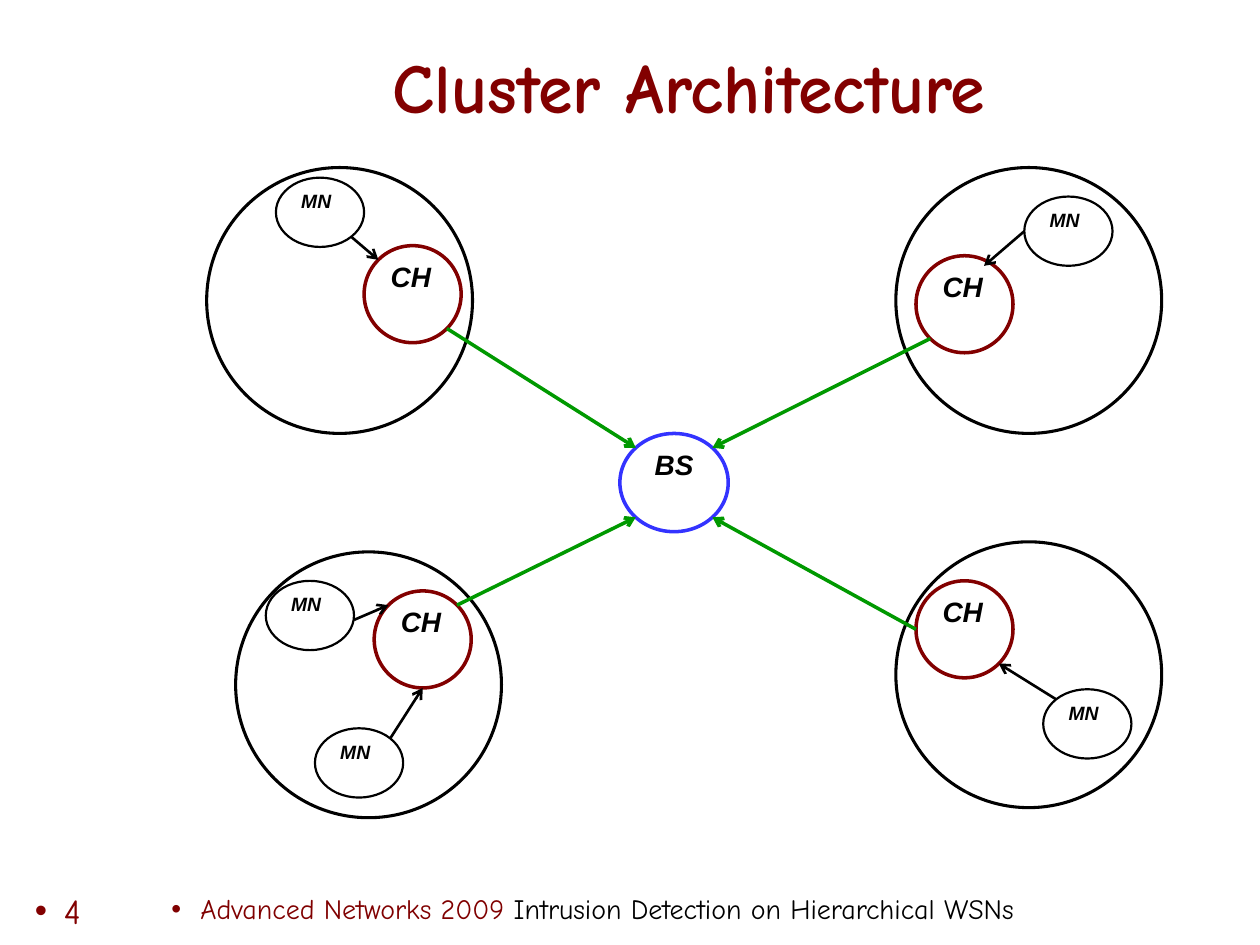
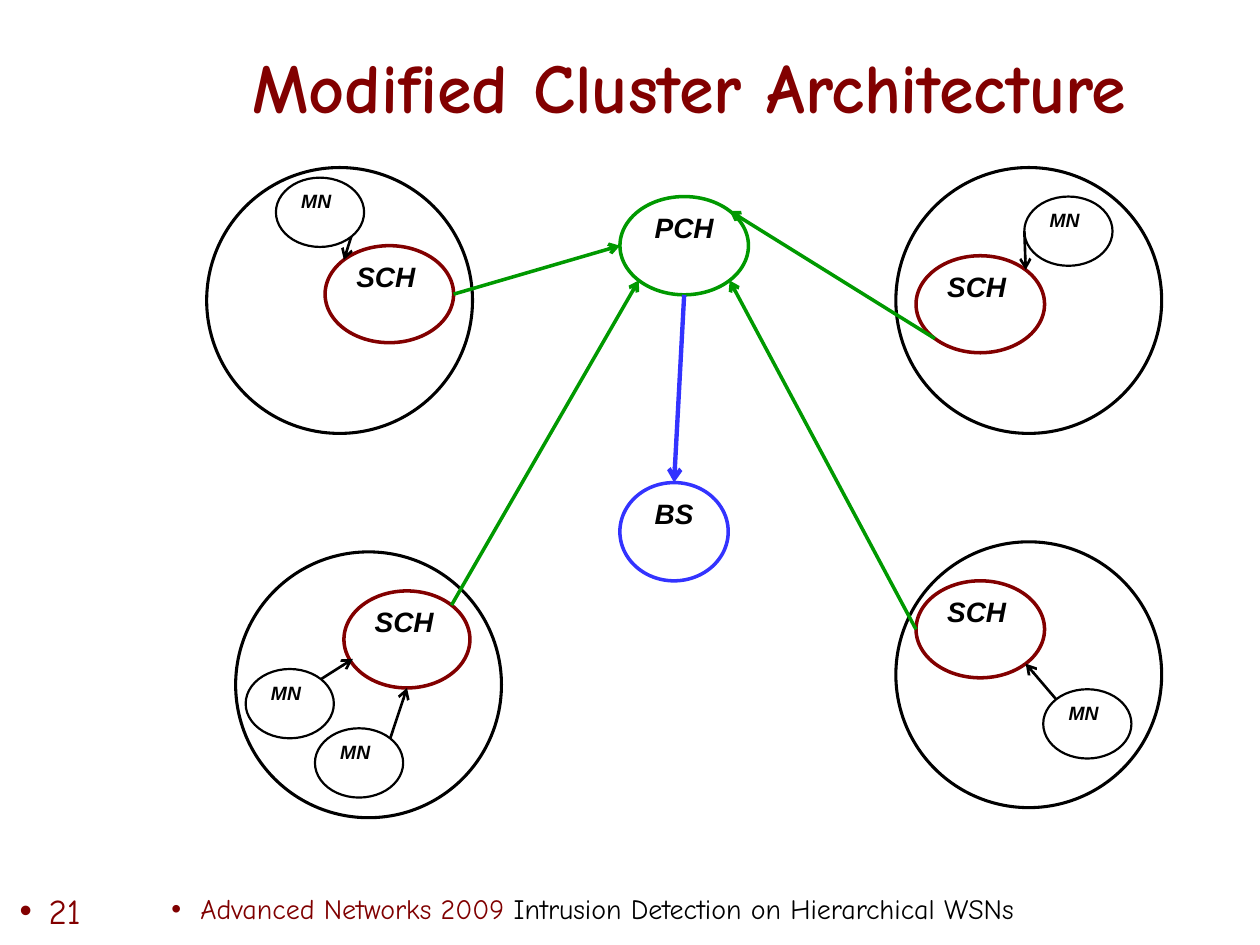
"""Build two slides on cluster architecture in sensor networks."""
import math
from pptx import Presentation, util as u
from pptx.dml.color import RGBColor
from pptx.enum import shapes, text
from pptx.oxml.ns import qn

THEME = {
    "maroon": "820000", "brown": "800000", "black": "000000",
    "green": "009900", "blue": "3333FF",
    "head": "Comic Neue", "body": "Arial",
    "title": 40, "page": 20, "foot": 16, "node": 16, "small": 11,
}
LEFT, MID, RIGHT = (text.PP_ALIGN.LEFT, text.PP_ALIGN.CENTER, text.PP_ALIGN.RIGHT)
FOOT = [("Advanced Networks 2009 ", "brown"),
        ("Intrusion Detection on Hierarchical WSNs", "black")]
TITLE_BOX = (1.06, 0.13, 8.82, 1.1)
FOOT_BOX = (0.86, 7.03, 7.84, 0.39)
PAGE_BOX = (-0.2, 7.01, 0.94, 0.52)
HANG = 0.23
RING = 2.11
RINGS = [(1.64, 1.33), (1.87, 4.38), (7.11, 1.33), (7.11, 4.3)]

KINDS = {
    "MN": dict(size=(0.7, 0.55), color="black", line=1.25, font="small", align=LEFT),
    "CH": dict(size=(0.77, 0.77), color="maroon", line=2, font="node", align=LEFT),
    "SCH": dict(size=(1.02, 0.77), color="maroon", line=2, font="node", align=LEFT),
    "PCH": dict(size=(1.02, 0.78), color="green", line=2, font="node", align=MID),
    "BS": dict(size=(0.86, 0.78), color="blue", line=2, font="node", align=MID),
}
LINKS = {"member": ("black", 1.5), "head": ("green", 2), "base": ("blue", 2.5)}
SITES = {"E": 0, "SE": 45, "S": 90, "SW": 135, "W": 180, "NW": 225, "N": 270, "NE": 315}

MEMBERS = {"m1": ("MN", 2.19, 1.41), "m3": ("MN", 8.13, 1.56),
           "m4": ("MN", 8.28, 5.47), "m5": ("MN", 2.5, 5.78)}
SLIDES = [
    dict(
        title="Cluster Architecture", page="4",
        nodes=MEMBERS | {
            "m2": ("MN", 2.11, 4.61), "base": ("BS", 4.92, 3.44),
            "h1": ("CH", 2.89, 1.95), "h2": ("CH", 2.97, 4.69),
            "h3": ("CH", 7.27, 2.03), "h4": ("CH", 7.27, 4.61)},
        links=[
            ("head", ("h1", "SE"), ("base", "NW")),
            ("head", ("h2", "NE"), ("base", "SW")),
            ("head", ("h3", "SW"), ("base", "NE")),
            ("head", ("h4", "W"), ("base", "SE")),
            ("member", ("m1", "SE"), ("h1", "NW")),
            ("member", (2.81, 4.92), ("h2", "NW")),
            ("member", ("m5", "NE"), ("h2", "S")),
            ("member", ("m3", "W"), (7.81, 2.11)),
            ("member", ("m4", "NW"), ("h4", "SE"))]),
    dict(
        title="Modified Cluster Architecture", page="21",
        nodes=MEMBERS | {
            "m2": ("MN", 1.95, 5.31), "base": ("BS", 4.92, 3.83),
            "main": ("PCH", 4.92, 1.56),
            "h1": ("SCH", 2.58, 1.95), "h2": ("SCH", 2.73, 4.69, 1),
            "h3": ("SCH", 7.27, 2.03), "h4": ("SCH", 7.27, 4.61)},
        links=[
            ("head", ("h1", "E"), ("main", "W")),
            ("head", ("h2", "NE"), ("main", "SW")),
            ("head", ("h3", "SW"), ("main", "NE")),
            ("head", ("h4", "W"), ("main", "SE")),
            ("base", ("main", "S"), ("base", "N")),
            ("member", ("m1", "SE"), ("h1", "NW")),
            ("member", ("m2", "NE"), (2.8, 5.23)),
            ("member", ("m5", "NE"), ("h2", "S")),
            ("member", ("m3", "W"), ("h3", "NE")),
            ("member", ("m4", "NW"), ("h4", "SE"))]),
]


def rgb(name):
    """Return a theme colour."""
    return RGBColor.from_string(THEME[name])


def put(obj, **vals):
    """Set each given attribute."""
    for key, val in vals.items():
        setattr(obj, key, val)


def inch(box):
    """Turn numbers into lengths."""
    return [u.Inches(n) for n in box]


def write(para, runs, size, face, **look):
    """Fill a paragraph with coloured runs."""
    for words, color in runs:
        run = para.add_run()
        run.text = words
        put(run.font, size=u.Pt(THEME[size]), name=THEME[face], **look)
        run.font.color.rgb = rgb(color)


def oval(slide, box, color, width):
    """Draw an unfilled ellipse."""
    shape = slide.shapes.add_shape(shapes.MSO_SHAPE.OVAL, *inch(box))
    shape.shadow.inherit = False
    shape.fill.background()
    shape.line.color.rgb = rgb(color)
    shape.line.width = u.Pt(width)
    return shape


def node(slide, kind, x, y, wide=None):
    """Draw a labelled node and return its box."""
    form = KINDS[kind]
    wide, high = wide or form["size"][0], form["size"][1]
    box = (x, y, wide, high)
    frame = oval(slide, box, form["color"], form["line"]).text_frame
    put(frame, word_wrap=True, vertical_anchor=text.MSO_ANCHOR.TOP)
    para = frame.paragraphs[0]
    put(para, alignment=form["align"], line_spacing=0.8)
    write(para, [(kind, "black")], form["font"], "body", bold=True, italic=True)
    return box


def spot(end, boxes):
    """Find the point of a node's site, or pass a free point on."""
    if end[0] not in boxes:
        return end
    x, y, w, h = boxes[end[0]]
    turn = math.radians(SITES[end[1]])
    return x + w / 2 * (1 + math.cos(turn)), y + h / 2 * (1 + math.sin(turn))


def link(slide, kind, start, stop):
    """Draw an arrow between two points."""
    color, width = LINKS[kind]
    line = slide.shapes.add_connector(
        shapes.MSO_CONNECTOR.STRAIGHT, *inch(start), *inch(stop))
    line.line.color.rgb = rgb(color)
    line.line.width = u.Pt(width)
    props = line.line._get_or_add_ln()
    props.append(props.makeelement(qn("a:tailEnd"), {"type": "arrow"}))
    look = line._element.spPr
    look.append(look.makeelement(qn("a:effectLst"), {}))


def note(slide, box, runs, size, align, inset=0.1):
    """Add a bulleted line at the foot."""
    frame = slide.shapes.add_textbox(*inch(box)).text_frame
    put(frame, word_wrap=True, margin_right=u.Inches(inset))
    para = frame.paragraphs[0]
    props = para._p.get_or_add_pPr()
    props.set("marL", str(u.Inches(HANG)))
    props.set("indent", str(-u.Inches(HANG)))
    for tag, vals in (("a:buFont", {"typeface": THEME["body"]}),
                      ("a:buChar", {"char": "•"})):
        props.append(props.makeelement(qn(tag), vals))
    para.alignment = align
    write(para, runs, size, "head")


def build(deck, data):
    """Add one slide with its network."""
    slide = deck.slides.add_slide(deck.slide_layouts[5])
    title = slide.shapes.title
    put(title, **dict(zip(("left", "top", "width", "height"), inch(TITLE_BOX))))
    title.text_frame.vertical_anchor = text.MSO_ANCHOR.MIDDLE
    para = title.text_frame.paragraphs[0]
    para.alignment = MID
    write(para, [(data["title"], "maroon")], "title", "head", bold=True)
    note(slide, FOOT_BOX, FOOT, "foot", MID, 0.25)
    note(slide, PAGE_BOX, [(data["page"], "maroon")], "page", RIGHT)
    for x, y in RINGS:
        oval(slide, (x, y, RING, RING), "black", 1.75)
    boxes = {name: node(slide, *spec) for name, spec in data["nodes"].items()}
    for kind, start, stop in data["links"]:
        link(slide, kind, spot(start, boxes), spot(stop, boxes))


def main():
    """Build and save the deck."""
    deck = Presentation()
    put(deck, slide_width=u.Inches(10), slide_height=u.Inches(7.5))
    for data in SLIDES:
        build(deck, data)
    deck.save("out.pptx")


if __name__ == "__main__":
    main()
